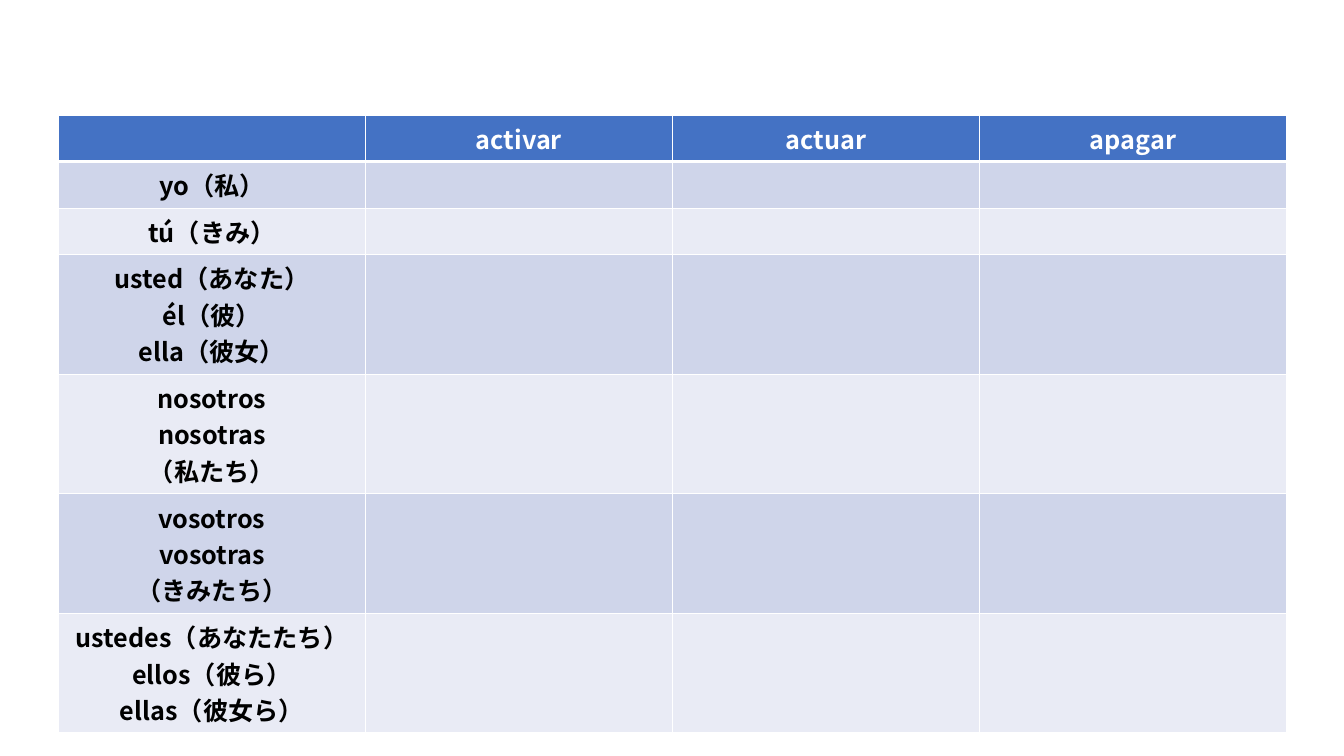
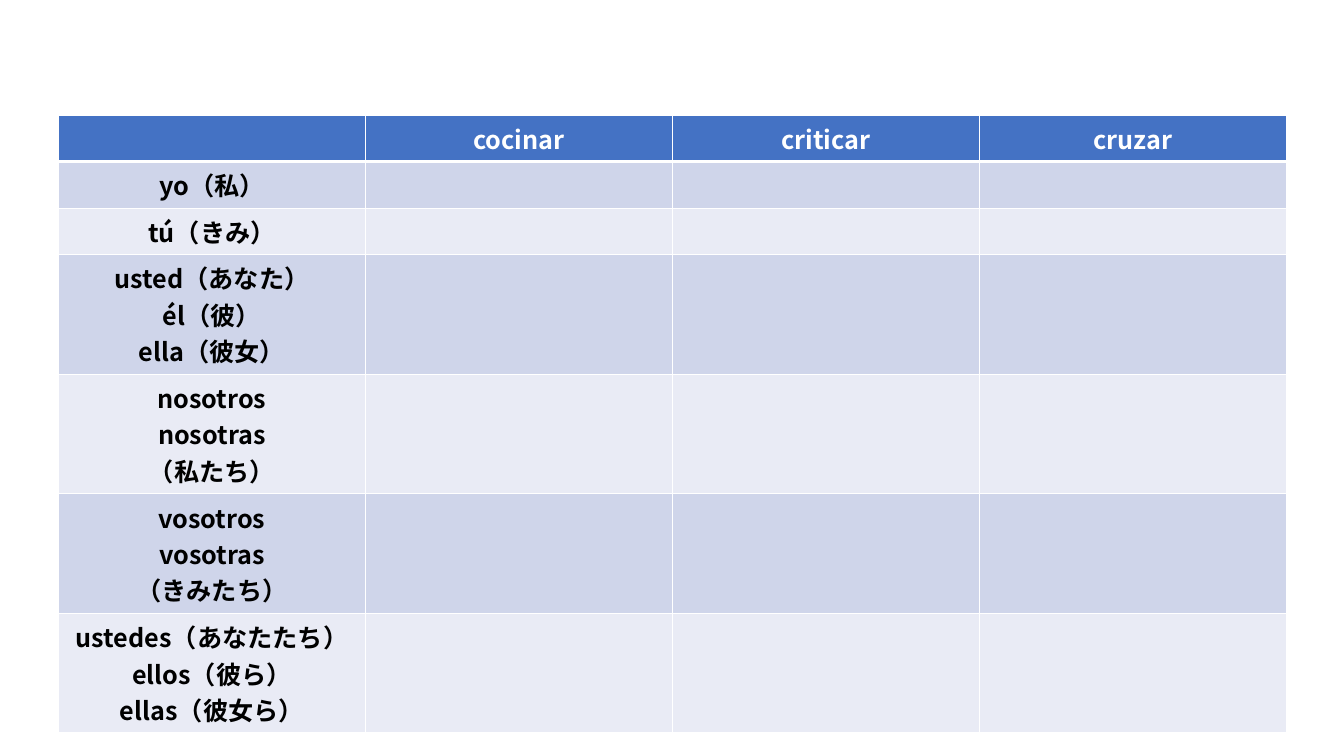
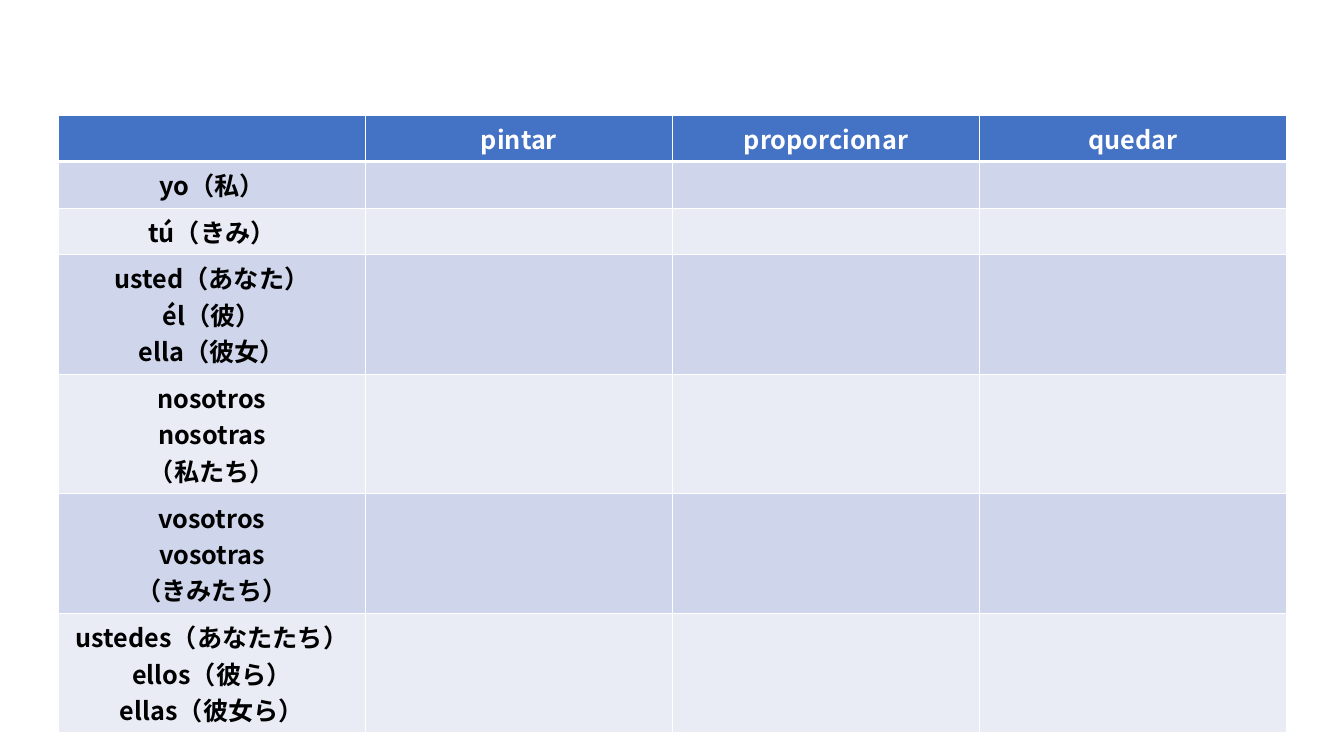
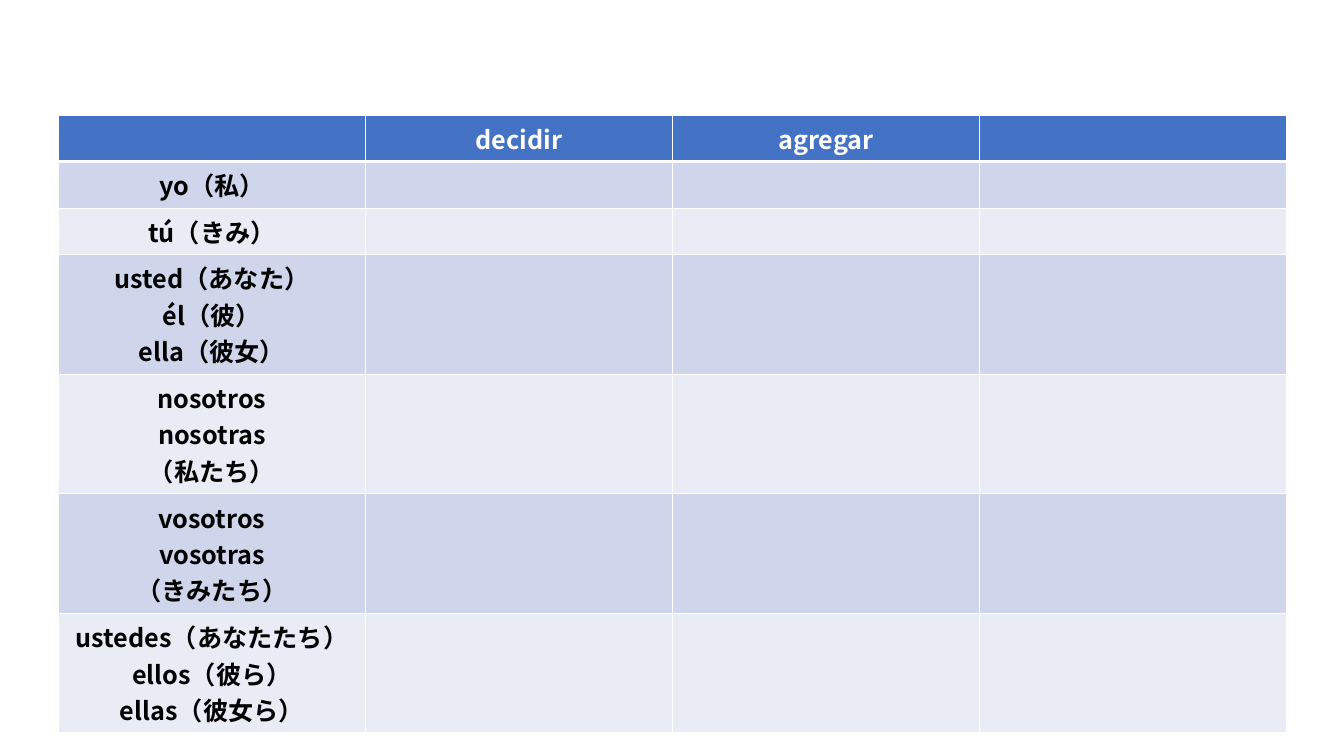
from dataclasses import dataclass

from lxml.etree import SubElement as Sub
from pptx import Presentation
from pptx.dml.color import RGBColor as Rgb
from pptx.enum.text import PP_ALIGN as Align
from pptx.oxml.ns import qn
from pptx.util import Inches, Pt


@dataclass(frozen=True)
class Theme:
    font: str = "Noto Sans CJK JP"
    size: int = 18
    head: str = "4472C4"
    bands: tuple = ("CFD5EA", "E9EBF5")
    light: str = "FFFFFF"
    dark: str = "000000"
    thin: int = 1
    thick: int = 3


THEME = Theme()
BOX = (0.58, 1.14, 12.18, 5.22)
ROW = 0.41  # least height: rows grow to fit their lines
PEOPLE = (
    "yo（私）",
    "tú（きみ）",
    "usted（あなた）\nél（彼）\nella（彼女）",
    "nosotros\nnosotras\n（私たち）",
    "vosotros\nvosotras\n（きみたち）",
    "ustedes（あなたたち）\nellos（彼ら）\nellas（彼女ら）",
)
VERBS = (
    ("activar", "actuar", "apagar"),
    ("cocinar", "criticar", "cruzar"),
    ("pintar", "proporcionar", "quedar"),
    ("decidir", "agregar", ""),
)


def edge(cell, top, base):
    """Draw the four borders; top and base are widths in points."""
    props = cell._tc.get_or_add_tcPr()
    widths = {"L": THEME.thin, "R": THEME.thin, "T": top, "B": base}
    for side, width in widths.items():
        line = Sub(props, qn(f"a:ln{side}"), w=str(Pt(width)))
        Sub(Sub(line, qn("a:solidFill")), qn("a:srgbClr"), val=THEME.light)


def write(cell, text, color):
    cell.text_frame.text = text
    for para in cell.text_frame.paragraphs:
        para.alignment = Align.CENTER
        para.font.size = Pt(THEME.size)
        for run in para.runs:
            font = run.font
            font.name, font.size, font.bold = THEME.font, Pt(THEME.size), True
            font.color.rgb = Rgb.from_string(color)
            Sub(run._r.get_or_add_rPr(), qn("a:ea"), typeface=THEME.font)


def style(cell, row):
    """Give a cell the borders and fill of its row."""
    edge(cell,
         top=THEME.thick if row == 1 else THEME.thin,
         base=THEME.thick if row == 0 else THEME.thin)
    fill = THEME.bands[(row - 1) % 2] if row else THEME.head
    cell.fill.solid()
    cell.fill.fore_color.rgb = Rgb.from_string(fill)


def grid(slide, verbs, box):
    """Add a table of persons down the side and verbs along the top."""
    left, top, width, height = map(Inches, box)
    rows, cols = len(PEOPLE) + 1, len(verbs) + 1
    frame = slide.shapes.add_table(rows, cols, left, top, width, height)
    table = frame.table
    table.horz_banding = False
    for line in table.rows:
        line.height = Inches(ROW)
    frame.height = height
    for row in range(rows):
        for col in range(cols):
            style(table.cell(row, col), row)
    for col, verb in enumerate(verbs, 1):
        write(table.cell(0, col), verb, THEME.light)
    for row, person in enumerate(PEOPLE, 1):
        write(table.cell(row, 0), person, THEME.dark)


def main():
    deck = Presentation()
    deck.slide_width, deck.slide_height = Inches(13.33), Inches(7.5)
    blank = deck.slide_layouts[6]
    for verbs in VERBS:
        grid(deck.slides.add_slide(blank), verbs, BOX)
    deck.save("out.pptx")


if __name__ == "__main__":
    main()
